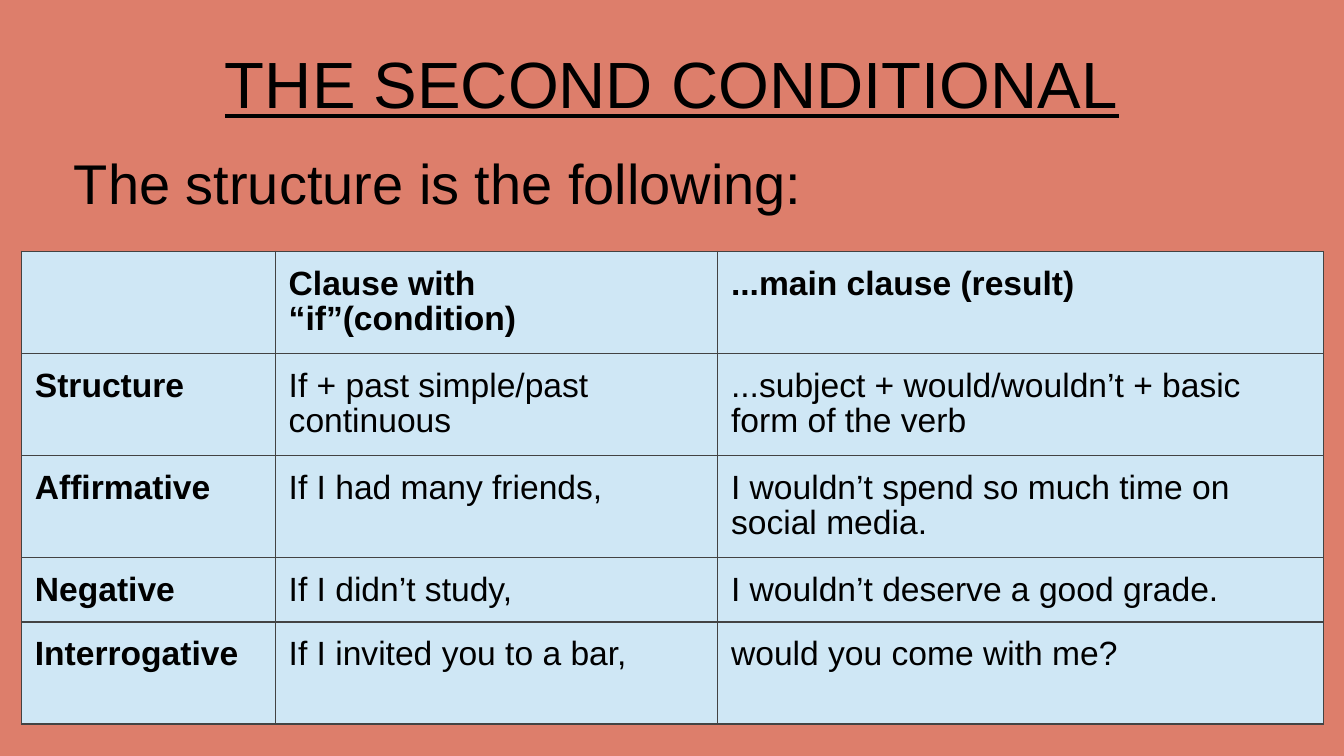
"""Build a slide that sets out the structure of the second conditional."""
from typing import NamedTuple

from lxml.etree import SubElement
from pptx import Presentation
from pptx.dml.color import RGBColor
from pptx.enum.text import MSO_ANCHOR, MSO_AUTO_SIZE, PP_ALIGN
from pptx.oxml.ns import qn
from pptx.slide import Slide
from pptx.table import _Cell
from pptx.util import Pt

CORAL = RGBColor(0xDD, 0x7E, 0x6B)
PALE_BLUE = RGBColor(0xCF, 0xE7, 0xF5)
DARK_GREY = RGBColor(0x43, 0x43, 0x43)
BLACK = RGBColor(0, 0, 0)
FONT = "Arial"
INSET = Pt(7.2)


class ClauseRow(NamedTuple):
    form: str
    condition: str
    result: str
    height: float = 54.7


CLAUSE_ROWS = [
    ClauseRow("", "Clause with “if”(condition)", "...main clause (result)"),
    ClauseRow("Structure", "If + past simple/past continuous",
              "...subject + would/wouldn’t + basic form of the verb"),
    ClauseRow("Affirmative", "If I had many friends,",
              "I wouldn’t spend so much time on social media."),
    ClauseRow("Negative", "If I didn’t study,", "I wouldn’t deserve a good grade.", 34.3),
    ClauseRow("Interrogative", "If I invited you to a bar,", "would you come with me?"),
]
COLUMN_WIDTHS = [136, 237, 324.5]


def write_text(shape, text: str, size: float, anchor: MSO_ANCHOR, align: PP_ALIGN) -> None:
    """Fill a title or text box with one paragraph."""
    frame = shape.text_frame
    frame.text = text
    frame.word_wrap = True
    frame.auto_size = MSO_AUTO_SIZE.NONE
    frame.vertical_anchor = anchor
    frame.margin_left = frame.margin_right = frame.margin_top = frame.margin_bottom = INSET
    paragraph = frame.paragraphs[0]
    paragraph.alignment = align
    paragraph.font.name = FONT
    paragraph.font.size = Pt(size)
    paragraph.font.color.rgb = BLACK


def add_heading(slide: Slide) -> None:
    """Place the underlined title and the line that introduces the table."""
    title = slide.shapes.title
    title.left, title.top, title.width, title.height = Pt(34), Pt(15), Pt(652), Pt(57.5)
    write_text(title, "THE SECOND CONDITIONAL", 35, MSO_ANCHOR.BOTTOM, PP_ALIGN.CENTER)
    title.text_frame.paragraphs[0].font.underline = True
    introduction = slide.shapes.add_textbox(Pt(32.5), Pt(72.5), Pt(652), Pt(332.5))
    write_text(introduction, "The structure is the following:", 30,
               MSO_ANCHOR.TOP, PP_ALIGN.LEFT)


def draw_borders(cell: _Cell) -> None:
    """Give a cell thin grey lines on its four sides."""
    properties = cell._tc.get_or_add_tcPr()
    for side in ("a:lnL", "a:lnR", "a:lnT", "a:lnB"):
        line = SubElement(properties, qn(side), w=str(Pt(0.75)))
        fill = SubElement(line, qn("a:solidFill"))
        SubElement(fill, qn("a:srgbClr"), val=str(DARK_GREY))


def format_cell(cell: _Cell, text: str, bold: bool) -> None:
    """Write and style one table cell."""
    draw_borders(cell)
    cell.fill.solid()
    cell.fill.fore_color.rgb = PALE_BLUE
    cell.margin_left = cell.margin_right = cell.margin_bottom = INSET
    cell.margin_top = Pt(8.6)
    cell.text = text
    paragraph = cell.text_frame.paragraphs[0]
    paragraph.line_spacing = 0.93
    paragraph.font.name = FONT
    paragraph.font.size = Pt(18)
    paragraph.font.bold = bold
    paragraph.font.color.rgb = BLACK


def add_clause_table(slide: Slide, rows: list[ClauseRow]) -> None:
    """Lay out the table of conditions and results."""
    table = slide.shapes.add_table(
        len(rows), len(COLUMN_WIDTHS), Pt(11.5), Pt(134.6),
        Pt(sum(COLUMN_WIDTHS)), Pt(sum(row.height for row in rows))).table
    table.first_row = table.horz_banding = False
    for column, width in zip(table.columns, COLUMN_WIDTHS):
        column.width = Pt(width)
    for row_index, row in enumerate(rows):
        table.rows[row_index].height = Pt(row.height)
        for column_index, text in enumerate((row.form, row.condition, row.result)):
            is_heading = row_index == 0 or column_index == 0
            format_cell(table.cell(row_index, column_index), text, is_heading)


def main() -> None:
    """Assemble and save the presentation."""
    presentation = Presentation()
    presentation.slide_width, presentation.slide_height = Pt(720), Pt(405)
    slide = presentation.slides.add_slide(presentation.slide_layouts.get_by_name("Title Only"))
    slide.background.fill.solid()
    slide.background.fill.fore_color.rgb = CORAL
    add_heading(slide)
    add_clause_table(slide, CLAUSE_ROWS)
    presentation.save("out.pptx")


if __name__ == "__main__":
    main()
